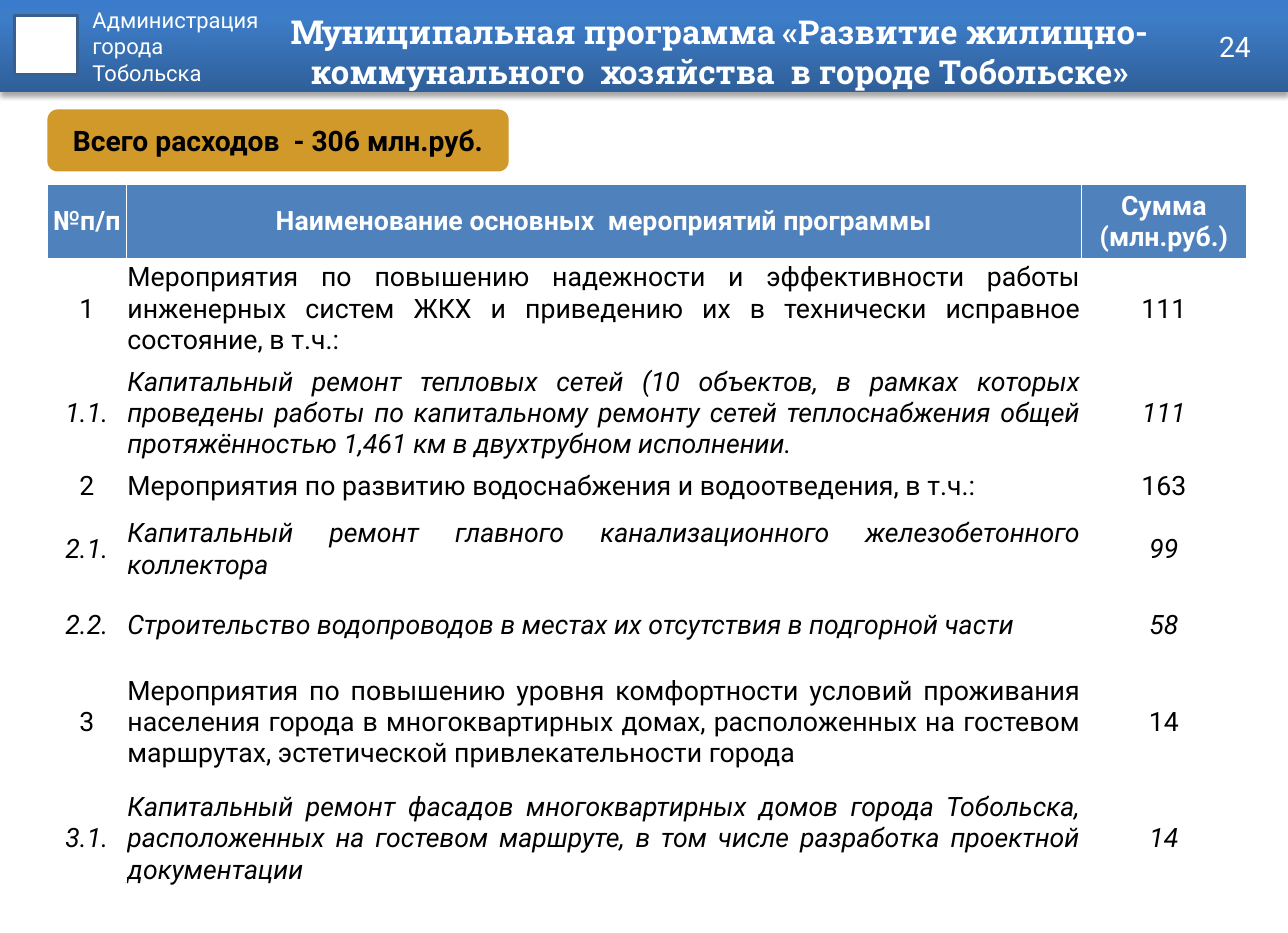
from copy import deepcopy

from lxml.etree import SubElement
from pptx import Presentation
from pptx.dml.color import RGBColor
from pptx.enum.shapes import MSO_SHAPE
from pptx.enum.text import MSO_ANCHOR, PP_ALIGN
from pptx.oxml.ns import qn
from pptx.util import Pt

PX = 9144  # 100 px to the inch

WHITE = RGBColor(0xFF, 0xFF, 0xFF)
BLACK = RGBColor(0, 0, 0)
BAND_DARK = RGBColor(0x2F, 0x5F, 0x99)
BAND_MID = RGBColor(0x3D, 0x7C, 0xC7)
BAND_LIGHT = RGBColor(0x3A, 0x7C, 0xCB)
EMBLEM_LINE = RGBColor(0x3A, 0x5F, 0x8C)
GOLD = RGBColor(0xD1, 0x98, 0x2A)
HEAD_BLUE = RGBColor(0x4F, 0x81, 0xBD)

TITLE = "Муниципальная программа «Развитие жилищно- коммунального  хозяйства  в городе Тобольске»"
HEADINGS = ("№п/п", "Наименование основных  мероприятий программы", "Сумма\n(млн.руб.)")
MEASURES = [
    ("1", "Мероприятия по повышению надежности и эффективности работы инженерных систем ЖКХ "
          "и приведению их в технически исправное состояние, в т.ч.:", "111"),
    ("1.1.", "Капитальный ремонт тепловых сетей (10 объектов, в рамках которых проведены работы "
             "по капитальному ремонту сетей теплоснабжения общей протяжённостью 1,461 км "
             "в двухтрубном исполнении.", "111"),
    ("2", "Мероприятия по развитию водоснабжения и водоотведения, в т.ч.:", "163"),
    ("2.1.", "Капитальный ремонт главного канализационного железобетонного коллектора", "99"),
    ("2.2.", "Строительство водопроводов в местах их отсутствия в подгорной части", "58"),
    ("3", "Мероприятия по повышению уровня комфортности условий проживания населения города "
          "в многоквартирных домах, расположенных на гостевом маршрутах, эстетической "
          "привлекательности города", "14"),
    ("3.1.", "Капитальный ремонт фасадов многоквартирных домов города Тобольска, расположенных "
             "на гостевом маршруте, в том числе разработка проектной документации", "14"),
]
COL_WIDTHS = (70, 847, 146)
ROW_HEIGHTS = (66, 89, 96, 34, 77, 58, 114, 92)


def emu(*lengths):
    return [n * PX for n in lengths]


def write(tf, text, size, color, align=PP_ALIGN.LEFT, font="Roboto", bold=False, italic=False):
    tf.text = text
    tf.word_wrap = True
    for p in tf.paragraphs:
        p.alignment = align
        for r in p.runs:
            r.font.name = font
            r.font.size = Pt(size)
            r.font.bold = bold
            r.font.italic = italic
            r.font.color.rgb = color


def set_insets(tf):
    tf.margin_left, tf.margin_top, tf.margin_right, tf.margin_bottom = emu(11, 6, 11, 6)


def add_label(s, box, text, size, anchor=MSO_ANCHOR.MIDDLE, **style):
    tf = s.shapes.add_textbox(*emu(*box)).text_frame
    set_insets(tf)
    tf.vertical_anchor = anchor
    write(tf, text, size, WHITE, **style)


def add_band(s, box):
    """Gradient strip with a soft shadow under it."""
    band = s.shapes.add_shape(MSO_SHAPE.RECTANGLE, *emu(*box))
    band.line.fill.background()
    band.fill.gradient()
    band.fill.gradient_angle = 90
    stop_list = band._element.spPr.find(qn("a:gradFill")).find(qn("a:gsLst"))
    stop_list.append(deepcopy(stop_list[-1]))
    stops = zip(band.fill.gradient_stops, (0, 0.8, 1), (BAND_DARK, BAND_MID, BAND_LIGHT))
    for stop, position, color in stops:
        stop.position = position
        stop.color.rgb = color

    band.shadow.inherit = False
    effects = band._element.spPr.find(qn("a:effectLst"))
    shadow = SubElement(effects, qn("a:outerShdw"), blurRad=str(Pt(3.1)), dist=str(Pt(1.8)),
                        dir="5400000", rotWithShape="0")
    shade = SubElement(shadow, qn("a:srgbClr"), val="000000")
    SubElement(shade, qn("a:alpha"), val="35000")


def add_header(s, box):
    x, y, w, h = box
    add_band(s, box)
    emblem = s.shapes.add_shape(MSO_SHAPE.RECTANGLE, *emu(x + 13, y + 14, 56, 52))
    emblem.shadow.inherit = False
    emblem.fill.solid()
    emblem.fill.fore_color.rgb = WHITE
    emblem.line.color.rgb = EMBLEM_LINE
    emblem.line.width = Pt(2)
    add_label(s, (x + 71, y, 268, 106), "Администрация\nгорода\nТобольска", 14,
              anchor=MSO_ANCHOR.TOP)
    add_label(s, (x + 209, y, 858, 91), TITLE, 21, align=PP_ALIGN.CENTER,
              font="Roboto Slab", bold=True)
    add_label(s, (x + w - 288, y + 19, 266, 44), "24", 18, align=PP_ALIGN.RIGHT)


def add_total(s, box):
    total = s.shapes.add_shape(MSO_SHAPE.ROUNDED_RECTANGLE, *emu(*box))
    total.shadow.inherit = False
    total.fill.solid()
    total.fill.fore_color.rgb = GOLD
    total.line.fill.background()
    tf = total.text_frame
    set_insets(tf)
    tf.vertical_anchor = MSO_ANCHOR.MIDDLE
    write(tf, "Всего расходов  - 306 млн.руб.", 18, BLACK, align=PP_ALIGN.CENTER, bold=True)


def add_borders(cell):
    tc_pr = cell._tc.get_or_add_tcPr()
    for side in ("lnL", "lnR", "lnT", "lnB"):
        line = SubElement(tc_pr, qn(f"a:{side}"), w=str(Pt(1)))
        fill = SubElement(line, qn("a:solidFill"))
        SubElement(fill, qn("a:srgbClr"), val=str(WHITE))


def add_measures(s, box):
    rows = [HEADINGS, *MEASURES]
    table = s.shapes.add_table(len(rows), len(HEADINGS), *emu(*box)).table
    table.horz_banding = False
    for column, width in zip(table.columns, COL_WIDTHS):
        column.width = width * PX
    for row, height in zip(table.rows, ROW_HEIGHTS):
        row.height = height * PX

    for i, values in enumerate(rows):
        is_head = i == 0
        is_sub = values[0].endswith(".")
        for j, value in enumerate(values):
            cell = table.cell(i, j)
            add_borders(cell)
            cell.margin_left = cell.margin_right = cell.margin_top = PX
            cell.margin_bottom = 0
            cell.vertical_anchor = MSO_ANCHOR.MIDDLE
            if is_head:
                cell.fill.solid()
                cell.fill.fore_color.rgb = HEAD_BLUE
            else:
                cell.fill.background()
            justified = j == 1 and not is_head
            write(cell.text_frame, value, 17, WHITE if is_head else BLACK,
                  align=PP_ALIGN.JUSTIFY if justified else PP_ALIGN.CENTER,
                  bold=is_head, italic=is_sub)


def main():
    prs = Presentation()
    prs.slide_width, prs.slide_height = emu(1142, 827)
    s = prs.slides.add_slide(prs.slide_layouts[6])
    add_header(s, (0, 0, 1142, 82))
    add_total(s, (42, 97, 409, 55))
    add_measures(s, (42, 163, sum(COL_WIDTHS), sum(ROW_HEIGHTS)))
    prs.save("out.pptx")


if __name__ == "__main__":
    main()
